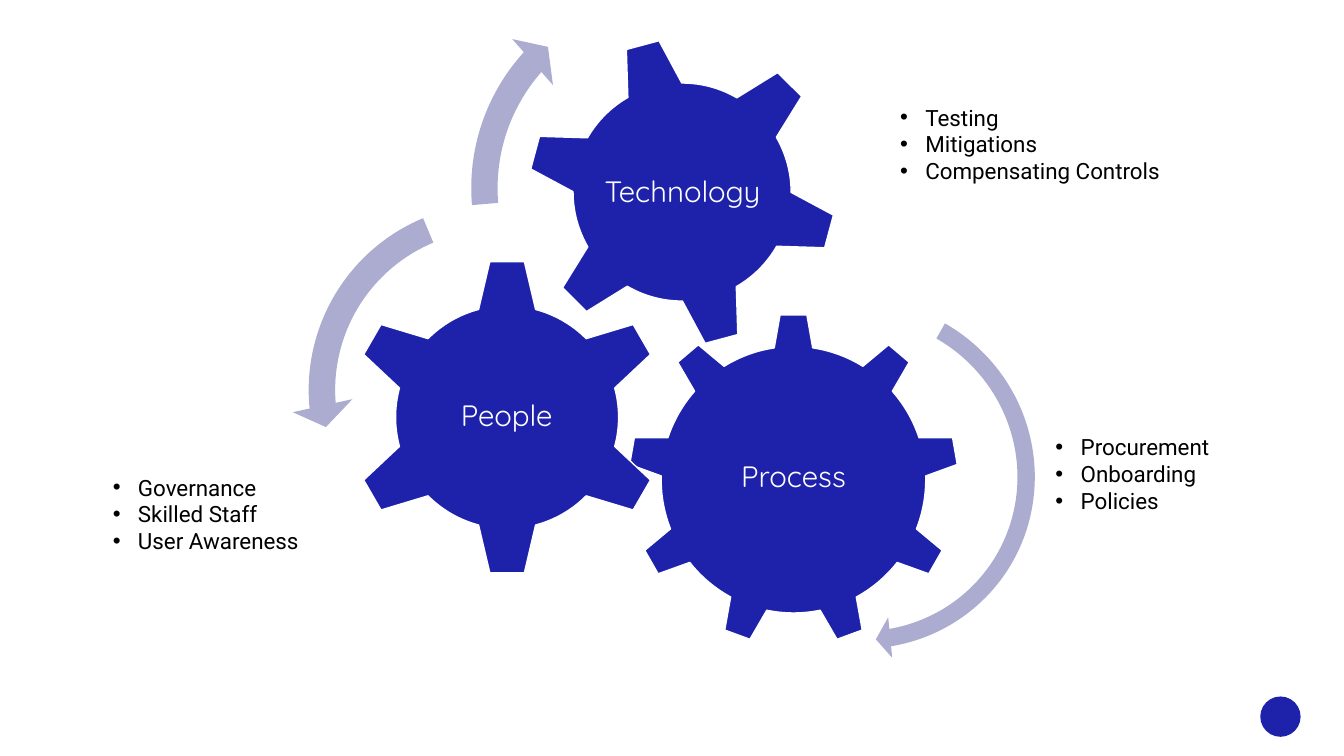
import pptx
import pptx.util
import pptx.dml.color
import pptx.enum.shapes
import pptx.enum.text
import pptx.oxml
import pptx.oxml.ns
import lxml.etree

SHAPE = pptx.enum.shapes.MSO_SHAPE
Inches = pptx.util.Inches
Pt = pptx.util.Pt

COLOURS = {"gear": "1E22AA", "arrow": "ACACD1", "label": "FFFFFF", "item": "000000"}

PAGE_DOT = (12.5, 6.91, 0.4, 0.4)

GEARS = [
    {"name": "Process", "kind": SHAPE.GEAR_9, "box": (6.23, 3.11, 3.28, 3.3),
     "turn": 0, "label_box": (6.89, 3.89, 1.96, 1.7)},
    {"name": "People", "kind": SHAPE.GEAR_6, "box": (3.45, 2.56, 3.16, 3.16),
     "turn": 0, "label_box": (4.24, 3.36, 1.57, 1.56)},
    {"name": "Technology", "kind": SHAPE.GEAR_6, "box": (5.22, 0.36, 3.09, 3.09),
     "turn": 345, "label_box": (5.9, 1.04, 1.74, 1.74)},
]

TURN_ARROWS = [
    (SHAPE.CIRCULAR_ARROW, (6.66, 2.87, 3.73, 3.67), 36.7,
     (0.047, 2.99, 25.601, 157.696, 0.055)),
    (SHAPE.LEFT_CIRCULAR_ARROW, (2.89, 1.85, 4.04, 4.04), 0,
     (0.065, 4.3, 104.891, 148.378, 0.075)),
    (SHAPE.CIRCULAR_ARROW, (4.5, -0.31, 4.35, 4.35), 0,
     (0.06, 3.941, 133.138, 105.082, 0.07)),
]

ITEM_LISTS = [
    ((1.02, 4.65, 2.61, 0.91), ["Governance", "Skilled Staff", "User Awareness"]),
    ((10.37, 4.25, 2.61, 0.91), ["Procurement", "Onboarding", "Policies"]),
    ((8.83, 0.98, 3.07, 0.91), ["Testing", "Mitigations", "Compensating Controls"]),
]

LABEL_FONT = {"name": "Quicksand", "size": Pt(21)}
ITEM_FONT = {"name": "Roboto", "size": Pt(16)}
LABEL_FRAME = {
    "word_wrap": True,
    "vertical_anchor": pptx.enum.text.MSO_ANCHOR.MIDDLE,
    **{f"margin_{side}": Inches(0.03) for side in ("left", "top", "right", "bottom")},
}
ITEM_FRAME = {"word_wrap": True, "auto_size": pptx.enum.text.MSO_AUTO_SIZE.SHAPE_TO_FIT_TEXT}
LABEL_PARAGRAPH = {"alignment": pptx.enum.text.PP_ALIGN.CENTER, "line_spacing": 0.9}


def apply(target, values):
    for key, value in values.items():
        setattr(target, key, value)


def colour(name):
    return pptx.dml.color.RGBColor.from_string(COLOURS[name])


def add_solid(slide, kind, box, fill, turn=0, outline=None):
    solid = slide.shapes.add_shape(kind, *map(Inches, box))
    solid.shadow.inherit = False
    solid.rotation = turn
    solid.fill.solid()
    solid.fill.fore_color.rgb = colour(fill)
    if outline:
        solid.line.color.rgb = colour(outline)
        solid.line.width = Pt(1)
    else:
        solid.line.fill.background()
    return solid


def add_text(slide, box, frame_format):
    frame = slide.shapes.add_textbox(*map(Inches, box)).text_frame
    apply(frame, frame_format)
    return frame


def add_bullet(paragraph):
    properties = paragraph._p.get_or_add_pPr()
    properties.set("marL", str(Inches(0.25)))
    properties.set("indent", str(Inches(-0.25)))
    for tag, key, value in (("a:buFont", "typeface", "Arial"), ("a:buChar", "char", "•")):
        lxml.etree.SubElement(properties, pptx.oxml.ns.qn(tag)).set(key, value)


def set_font(paragraph, font_format, colour_name):
    apply(paragraph.font, font_format)
    paragraph.font.color.rgb = colour(colour_name)


def main():
    deck = pptx.Presentation()
    apply(deck, {"slide_width": Inches(13.33), "slide_height": Inches(7.5)})
    slide = deck.slides.add_slide(deck.slide_layouts[6])

    add_solid(slide, SHAPE.OVAL, PAGE_DOT, "gear")

    for gear in GEARS:
        add_solid(slide, gear["kind"], gear["box"], "gear", gear["turn"], "label")
        label = add_text(slide, gear["label_box"], LABEL_FRAME).paragraphs[0]
        label.text = gear["name"]
        apply(label, LABEL_PARAGRAPH)
        set_font(label, LABEL_FONT, "label")

    for kind, box, turn, bends in TURN_ARROWS:
        turn_arrow = add_solid(slide, kind, box, "arrow", turn)
        for index, bend in enumerate(bends):
            turn_arrow.adjustments[index] = bend

    for box, items in ITEM_LISTS:
        frame = add_text(slide, box, ITEM_FRAME)
        for index, item in enumerate(items):
            line = frame.add_paragraph() if index else frame.paragraphs[0]
            line.text = item
            add_bullet(line)
            set_font(line, ITEM_FONT, "item")

    deck.save("out.pptx")


if __name__ == "__main__":
    main()
